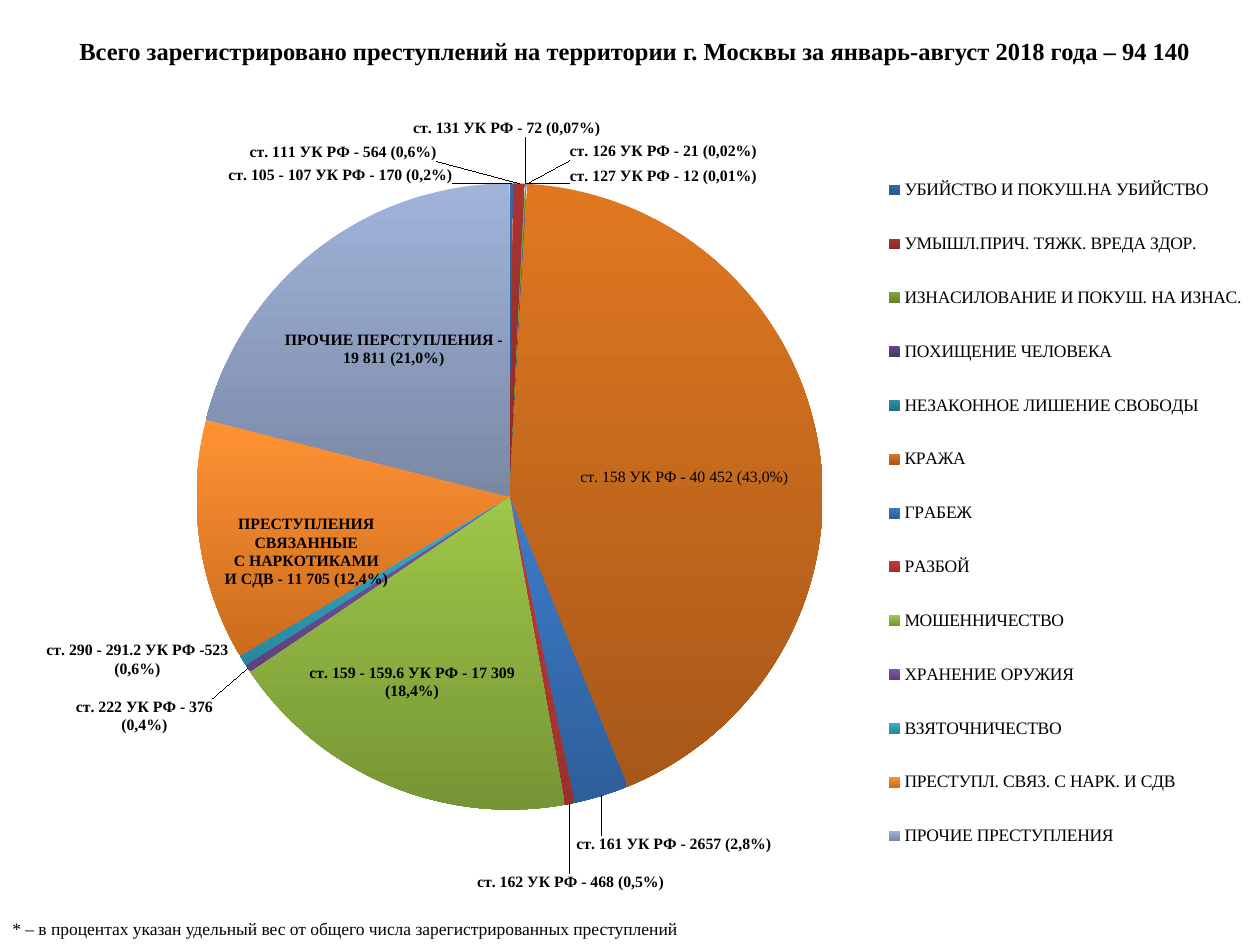
import math
import pptx
import pptx.util
import pptx.chart.data
import pptx.dml.color
import pptx.enum.chart
import pptx.enum.text
import pptx.oxml
import pptx.oxml.ns

Pt = pptx.util.Pt
FONT = "Times New Roman"
HUES = {
    "text": "000000",
    "murder": ("3469AB", "2A5590"),
    "harm": ("A83532", "8A2A28"),
    "rape": ("7FA436", "65822B"),
    "kidnap": ("644689", "4F376C"),
    "captive": ("2B8FA9", "227286"),
    "theft": ("E07820", "A8581A"),
    "robbery": ("3D7CCB", "2E5F9A"),
    "assault": ("C33B38", "9A302E"),
    "fraud": ("9DC748", "769535"),
    "arms": ("7B57A8", "5E417F"),
    "bribe": ("36B1D2", "2A869F"),
    "drugs": ("FF9234", "CB6C1D"),
    "other": ("A0B4DA", "7A88A5"),
}
CRIMES = [
    ("murder", "УБИЙСТВО И ПОКУШ.НА УБИЙСТВО", 170,
     "ст. 105 - 107 УК РФ - 170 (0,2%)", 194.5, 100),
    ("harm", "УМЫШЛ.ПРИЧ. ТЯЖК. ВРЕДА ЗДОР.", 564,
     "ст. 111 УК РФ - 564 (0,6%)", 196, 87),
    ("rape", "ИЗНАСИЛОВАНИЕ И ПОКУШ. НА ИЗНАС.", 72,
     "ст. 131 УК РФ - 72 (0,07%)", 289.5, 73.5),
    ("kidnap", "ПОХИЩЕНИЕ ЧЕЛОВЕКА", 21,
     "ст. 126 УК РФ - 21 (0,02%)", 379, 86.5),
    ("captive", "НЕЗАКОННОЕ ЛИШЕНИЕ СВОБОДЫ", 12,
     "ст. 127 УК РФ - 12 (0,01%)", 379, 100.5),
    ("theft", "КРАЖА", 40452,
     "ст. 158 УК РФ - 40 452 (43,0%)", 391, 272.5),
    ("robbery", "ГРАБЕЖ", 2657,
     "ст. 161 УК РФ - 2657 (2,8%)", 385, 482.5),
    ("assault", "РАЗБОЙ", 468,
     "ст. 162 УК РФ - 468 (0,5%)", 326, 504.5),
    ("fraud", "МОШЕННИЧЕСТВО", 17309,
     "ст. 159 - 159.6 УК РФ - 17 309 (18,4%)", 235.5, 390),
    ("arms", "ХРАНЕНИЕ ОРУЖИЯ", 376,
     "ст. 222 УК РФ - 376\n(0,4%)", 82.5, 409.5),
    ("bribe", "ВЗЯТОЧНИЧЕСТВО", 523,
     "ст. 290 - 291.2 УК РФ -523\n(0,6%)", 78.5, 377),
    ("drugs", "ПРЕСТУПЛ. СВЯЗ. С НАРК. И СДВ", 11705,
     "ПРЕСТУПЛЕНИЯ\nСВЯЗАННЫЕ\nС НАРКОТИКАМИ\nИ СДВ - 11 705 (12,4%)", 175, 315.5),
    ("other", "ПРОЧИЕ ПРЕСТУПЛЕНИЯ", 19811,
     "ПРОЧИЕ ПЕРСТУПЛЕНИЯ -\n19 811 (21,0%)", 225, 199.5),
]


def tint(code):
    return pptx.dml.color.RGBColor.from_string(code)


def style(font, size, bold=False):
    font.name, font.size, font.bold = FONT, Pt(size), bold
    font.color.rgb = tint(HUES["text"])


def put(para, text, size, bold=False):
    run = para.add_run()
    run.text = text
    style(run.font, size, bold)


def place(shape, box):
    shape.left, shape.top, shape.width, shape.height = map(Pt, box)


def lay(host, spot, **sides):
    for old in host.findall(pptx.oxml.ns.qn("c:layout")):
        host.remove(old)
    inner = '<c:layoutTarget val="inner"/>' if "target" in sides else ""
    modes = "".join(f'<c:{side}Mode val="edge"/>' for side in "xy" if "w" in sides)
    sizes = "".join(f'<c:{side} val="{sides[side]:.4f}"/>' for side in "xywh" if side in sides)
    host.insert(spot, pptx.oxml.parse_xml(
        f'<c:layout {pptx.oxml.ns.nsdecls("c")}><c:manualLayout>'
        f'{inner}{modes}{sizes}</c:manualLayout></c:layout>'))


def head(slide, box):
    title = slide.shapes.title
    place(title, box)
    frame = title.text_frame
    frame.word_wrap = True
    frame.auto_size = pptx.enum.text.MSO_AUTO_SIZE.NONE
    frame.vertical_anchor = pptx.enum.text.MSO_ANCHOR.MIDDLE
    para = frame.paragraphs[0]
    para.alignment = pptx.enum.text.PP_ALIGN.CENTER
    put(para, "Всего зарегистрировано преступлений на территории г. Москвы "
        "за январь-август 2018 года – 94 140", 14, True)


def note(slide, box):
    frame = slide.shapes.add_textbox(*map(Pt, box)).text_frame
    frame.word_wrap = True
    put(frame.paragraphs[0], "* – в процентах указан удельный вес от общего числа "
        "зарегистрированных преступлений", 10)


def label(series, index, text, shift):
    tag = series.points[index].data_label
    frame = tag.text_frame
    for row, line in enumerate(text.split("\n")):
        para = frame.add_paragraph() if row else frame.paragraphs[0]
        put(para, line, 9, CRIMES[index][0] != "theft")
    tag.position = pptx.enum.chart.XL_LABEL_POSITION.CENTER
    node = series._element.xpath(f'c:dLbls/c:dLbl[c:idx/@val="{index}"]')[0]
    lay(node, 1, x=shift[0], y=shift[1])


def paint(point, hues):
    fill = point.format.fill
    fill.gradient()
    fill.gradient_angle = 270
    for stop, hue in zip(fill.gradient_stops, hues):
        stop.color.rgb = tint(hue)
    point.format.line.fill.background()


def pie(slide, box):
    left, top, width, height = box
    plot = dict(x=0.156, y=0.096, w=0.497, h=0.776)
    data = pptx.chart.data.CategoryChartData()
    data.categories = [crime[1] for crime in CRIMES]
    data.add_series("Series 1", [crime[2] for crime in CRIMES])
    chart = slide.shapes.add_chart(
        pptx.enum.chart.XL_CHART_TYPE.PIE, *map(Pt, box), data).chart
    style(chart.font, 10)
    chart.has_title = False
    chart.has_legend = True
    chart.legend.position = pptx.enum.chart.XL_LEGEND_POSITION.RIGHT
    chart.legend.include_in_layout = False
    style(chart.legend.font, 10)
    lay(chart.legend._element, 1, x=0.697, y=0.071, w=0.297, h=0.865)
    lay(chart._chartSpace.chart.plotArea, 0, target="inner", **plot)
    chart.plots[0].vary_by_categories = True

    series = chart.plots[0].series[0]
    tags = series.data_labels
    tags.show_value = True
    style(tags.font, 9, True)
    mid_x = left + width * (plot["x"] + plot["w"] / 2)
    mid_y = top + height * (plot["y"] + plot["h"] / 2)
    reach = min(width * plot["w"], height * plot["h"]) / 4
    total = sum(crime[2] for crime in CRIMES)
    passed = 0
    for index, (key, name, count, text, x, y) in enumerate(CRIMES):
        angle = 2 * math.pi * (passed + count / 2) / total
        passed += count
        paint(series.points[index], HUES[key])
        shift = ((x - mid_x - reach * math.sin(angle)) / width,
                 (y - mid_y + reach * math.cos(angle)) / height)
        label(series, index, text, shift)


def main():
    deck = pptx.Presentation()
    deck.slide_width, deck.slide_height = Pt(720), Pt(540)
    slide = deck.slides.add_slide(deck.slide_layouts[5])
    head(slide, (20, 16.5, 686, 24.5))
    note(slide, (0, 521, 670, 19))
    pie(slide, (0, 49, 720, 485))
    deck.save("out.pptx")


if __name__ == "__main__":
    main()
